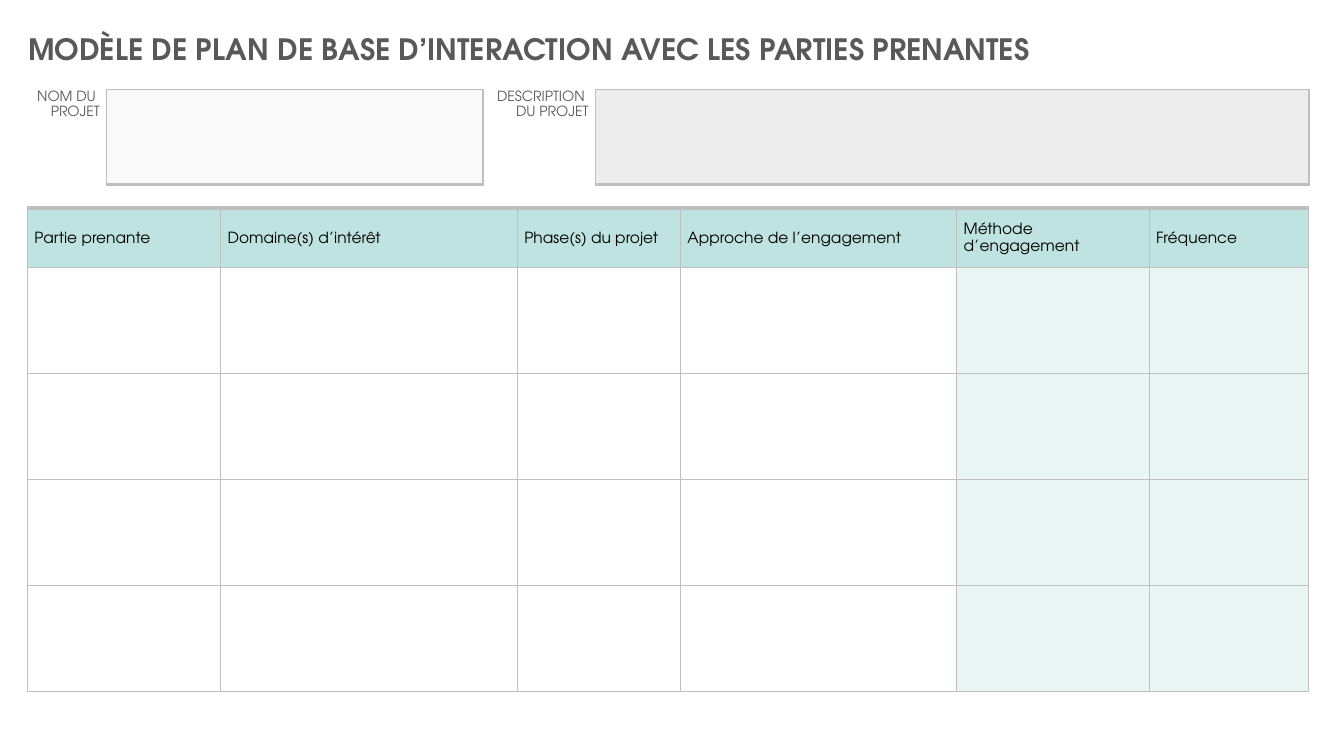
from lxml.etree import SubElement
from pptx import Presentation
from pptx.dml.color import RGBColor
from pptx.enum.text import MSO_ANCHOR, MSO_AUTO_SIZE, PP_ALIGN
from pptx.oxml.ns import qn
from pptx.util import Pt

TITLE = "MODÈLE DE PLAN DE BASE D’INTERACTION AVEC LES PARTIES PRENANTES"
GREY = RGBColor(0x59, 0x59, 0x59)
BLACK = RGBColor(0, 0, 0)
WHITE = RGBColor(0xFF, 0xFF, 0xFF)
BORDER = RGBColor(0xBF, 0xBF, 0xBF)
TEAL = RGBColor(0xBE, 0xE3, 0xE0)
PALE_TEAL = RGBColor(0xE9, 0xF6, 0xF4)
FONT = "TeX Gyre Adventor"
NO_STYLE = "{2D5ABB26-0587-4C30-8999-92F81FD0307C}"

# label lines, left, column widths, fill of the entry field
FIELDS = [
    (["NOM DU ", "PROJET"], 13, [63.2, 268.8], RGBColor(0xF9, 0xF9, 0xF9)),
    (["DESCRIPTION ", "DU PROJET"], 345, [80.3, 509.7], RGBColor(0xED, 0xED, 0xED)),
]
FIELD_TOP, FIELD_H = 64, 67.7

# heading, column width, body fill
COLUMNS = [
    ("Partie prenante", 138, WHITE),
    ("Domaine(s) d’intérêt", 212, WHITE),
    ("Phase(s) du projet", 116.5, WHITE),
    ("Approche de l’engagement", 197.3, WHITE),
    ("Méthode d’engagement", 137.5, PALE_TEAL),
    ("Fréquence", 113.7, PALE_TEAL),
]
PLAN_LEFT, PLAN_TOP = 19.6, 148.5
ROW_HEIGHTS = [42.7] + [75.7] * 4


def write(tf, *lines, size, color, bold=False, align=PP_ALIGN.LEFT, spacing=None):
    p = tf.paragraphs[0]
    p.alignment = align
    p.line_spacing = spacing
    for i, line in enumerate(lines):
        if i:
            p.add_line_break()
            SubElement(p._p[-1], qn("a:rPr"), sz=str(size * 100))
        r = p.add_run()
        r.text = line
        r.font.name = FONT
        r.font.size = Pt(size)
        r.font.bold = bold
        r.font.color.rgb = color


def write_cell(cell, *lines, **style):
    cell.margin_left = cell.margin_right = Pt(5)
    cell.margin_top = cell.margin_bottom = 0
    write(cell.text_frame, *lines, spacing=1.15, **style)


def set_borders(cell, left=1, right=1, top=1, bottom=1):
    """Draw the cell's sides with these widths in points; 0 leaves a side out."""
    tcPr = cell._tc.get_or_add_tcPr()
    for side, width in zip("LRTB", (left, right, top, bottom)):
        if width:
            ln = SubElement(tcPr, qn("a:ln" + side), w=str(Pt(width)))
            fill = SubElement(ln, qn("a:solidFill"))
            SubElement(fill, qn("a:srgbClr"), val=str(BORDER))


def fill_cell(cell, color):
    cell.fill.solid()
    cell.fill.fore_color.rgb = color


def add_plain_table(s, left, top, widths, heights):
    frame = s.shapes.add_table(len(heights), len(widths), Pt(left), Pt(top),
                               Pt(sum(widths)), Pt(sum(heights)))
    table = frame.table
    table.first_row = table.horz_banding = False
    table._tbl.tblPr.find(qn("a:tableStyleId")).text = NO_STYLE
    for col, width in zip(table.columns, widths):
        col.width = Pt(width)
    for row, height in zip(table.rows, heights):
        row.height = Pt(height)
    return table


prs = Presentation()
prs.slide_width, prs.slide_height = Pt(960), Pt(540)
s = prs.slides.add_slide(prs.slide_layouts[5])

title = s.shapes.title
title.left, title.top, title.width, title.height = Pt(13), Pt(18.7), Pt(859), Pt(32.4)
tf = title.text_frame
tf.word_wrap = True
tf.auto_size = MSO_AUTO_SIZE.SHAPE_TO_FIT_TEXT
tf.vertical_anchor = MSO_ANCHOR.TOP
write(tf, TITLE, size=21, color=GREY, bold=True)

for label_lines, left, widths, color in FIELDS:
    table = add_plain_table(s, left, FIELD_TOP, widths, [FIELD_H])
    label, field = table.cell(0, 0), table.cell(0, 1)
    write_cell(label, *label_lines, size=10, color=GREY, align=PP_ALIGN.RIGHT)
    set_borders(label, left=0, top=0, bottom=0)
    set_borders(field, bottom=2.25)
    fill_cell(field, color)

plan = add_plain_table(s, PLAN_LEFT, PLAN_TOP, [c[1] for c in COLUMNS], ROW_HEIGHTS)
for j, (heading, _, body_color) in enumerate(COLUMNS):
    for i in range(len(ROW_HEIGHTS)):
        cell = plan.cell(i, j)
        set_borders(cell, top=1 if i else 3)
        fill_cell(cell, body_color if i else TEAL)
    head = plan.cell(0, j)
    head.vertical_anchor = MSO_ANCHOR.MIDDLE
    write_cell(head, heading, size=11, color=BLACK)

prs.save("out.pptx")
